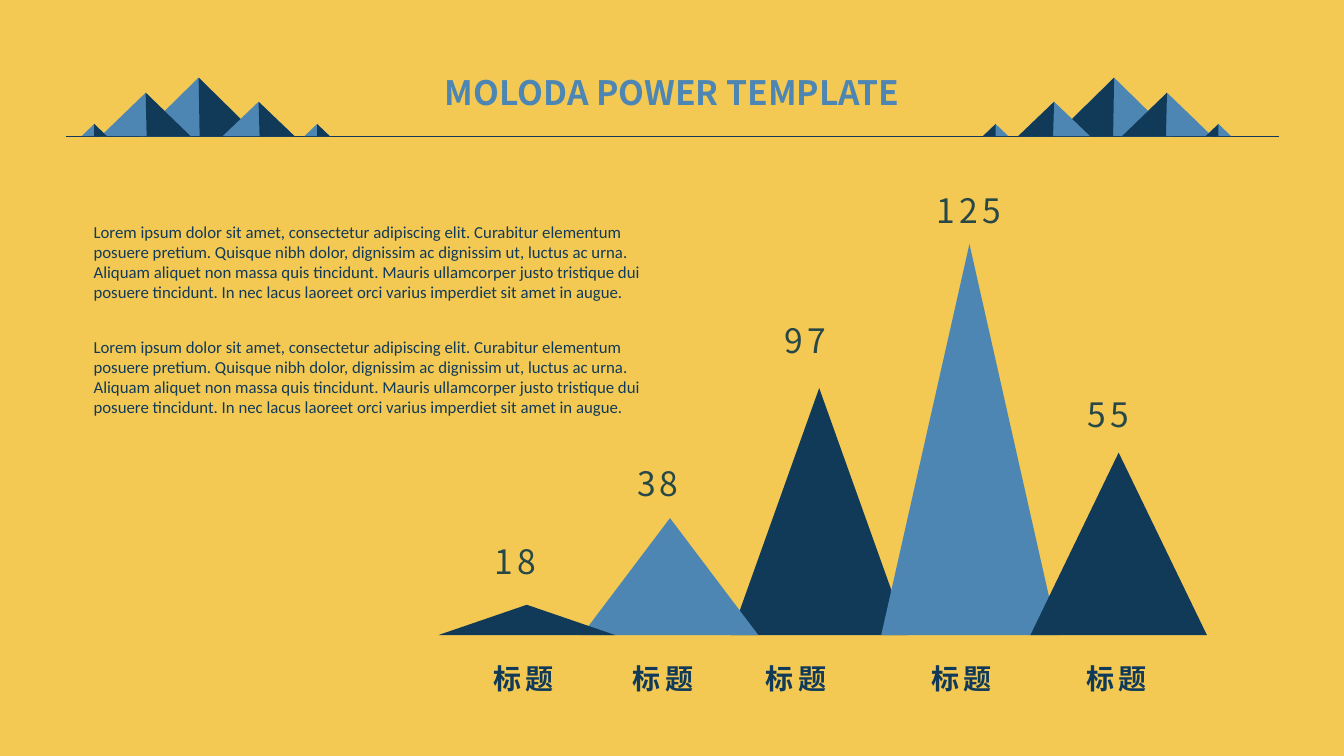
import pptx
import pptx.dml.color
import pptx.enum.shapes
import pptx.enum.text
import pptx.oxml.ns
import pptx.util
from lxml import etree

RGBColor = pptx.dml.color.RGBColor
SAND = RGBColor(0xF3, 0xC9, 0x53)
NAVY = RGBColor(0x11, 0x3A, 0x59)
BLUE = RGBColor(0x4D, 0x86, 0xB3)
MOSS = RGBColor(0x28, 0x48, 0x48)

SCALE = 9144  # EMU per px, 100 px to the inch
HEADING_FONT = "Noto Sans CJK SC"
BODY_FONT = "Calibri"
ALIGN = pptx.enum.text.PP_ALIGN

TITLE = {"size": 24, "name": HEADING_FONT, "color": BLUE, "bold": True}
VALUE = {"size": 24, "name": HEADING_FONT, "color": MOSS}
LABEL = {"size": 20, "name": HEADING_FONT, "color": NAVY, "bold": True}
BODY = {"size": 12, "name": BODY_FONT, "color": NAVY}

LOREM = (
    "Lorem ipsum dolor sit amet, consectetur adipiscing elit. Curabitur elementum "
    "posuere pretium. Quisque nibh dolor, dignissim ac dignissim ut, luctus ac urna. "
    "Aliquam aliquet non massa quis tincidunt. Mauris ullamcorper justo tristique dui "
    "posuere tincidunt. In nec lacus laoreet orci varius imperdiet sit amet in augue."
)

# Header mountains on the right: left, width, height
HEADER_BASE = 135
HEADER_PEAKS = [(1046, 118, 58), (1010, 71, 34), (1113, 89, 43),
                (975, 25, 12), (1196, 25, 12)]
MIRROR_SUM = 1302

# Chart peaks from back to front: value, left, top, colour,
# value box (left, top, width), label left
CHART_BASE, PEAK_WIDTH = 630, 175
CHART_PEAKS = [
    ("97", 725, 385, NAVY, (768, 312, 68), 747),
    ("38", 577, 514, BLUE, (622, 454, 68), 615),
    ("18", 435, 600, NAVY, (481, 532, 68), 477),
    ("125", 874, 242, BLUE, (919, 183, 92), 911),
    ("55", 1022, 449, NAVY, (1069, 386, 68), 1065),
]


def px(length):
    return pptx.util.Emu(length * SCALE)


class SlideBuilder:
    def __init__(self, deck):
        self.page = deck.slides.add_slide(deck.slide_layouts[6])
        self.shapes = self.page.shapes

    def background(self, color):
        fill = self.page.background.fill
        fill.solid()
        fill.fore_color.rgb = color

    def paint(self, shape, color):
        shape.shadow.inherit = False
        shape.fill.solid()
        shape.fill.fore_color.rgb = color
        shape.line.fill.background()

    def triangle(self, left, top, width, height, color, group):
        shape = group.shapes.add_shape(
            pptx.enum.shapes.MSO_SHAPE.ISOSCELES_TRIANGLE,
            px(left), px(top), px(width), px(height))
        self.paint(shape, color)

    def polygon(self, points, color, group=None):
        shapes = group.shapes if group else self.shapes
        start, *rest = [(px(x), px(y)) for x, y in points]
        builder = shapes.build_freeform(*start)
        builder.add_line_segments(rest, close=True)
        self.paint(builder.convert_to_shape(), color)

    def rule(self, left, right, y, color, weight):
        line = self.shapes.add_connector(
            pptx.enum.shapes.MSO_CONNECTOR.STRAIGHT,
            px(left), px(y), px(right), px(y))
        line.line.color.rgb = color
        line.line.width = pptx.util.Pt(weight)
        etree.SubElement(line._element.spPr, pptx.oxml.ns.qn("a:effectLst"))

    def text(self, words, left, top, width, height, style,
             align=ALIGN.LEFT, wrap=False, spacing=0):
        box = self.shapes.add_textbox(px(left), px(top), px(width), px(height))
        frame = box.text_frame
        frame.word_wrap = wrap
        if not wrap:
            frame.auto_size = pptx.enum.text.MSO_AUTO_SIZE.SHAPE_TO_FIT_TEXT
        para = frame.paragraphs[0]
        para.alignment = align
        span = para.add_run()
        span.text = words
        for key, value in style.items():
            if key == "color":
                span.font.color.rgb = value
            elif key == "size":
                span.font.size = pptx.util.Pt(value)
            else:
                setattr(span.font, key, value)
        # East Asian typeface and letter spacing
        properties = span._r.get_or_add_rPr()
        typeface = etree.SubElement(properties, pptx.oxml.ns.qn("a:ea"))
        typeface.set("typeface", style["name"])
        if spacing:
            properties.set("spc", str(spacing * 100))

    def mountain_range(self, mirrored):
        group = self.shapes.add_group_shape()
        for left, width, height in HEADER_PEAKS:
            top, middle = HEADER_BASE - height, left + width / 2
            foot = middle - (1 if height > 20 else 0)
            shaded = [(middle, top), (foot, HEADER_BASE), (left, HEADER_BASE)]
            if mirrored:
                left = MIRROR_SUM - left - width
                shaded = [(MIRROR_SUM - x, y) for x, y in shaded]
            self.triangle(left, top, width, height, BLUE, group)
            self.polygon([(int(x * 2) / 2, y) for x, y in shaded], NAVY, group)


def main():
    deck = pptx.Presentation()
    deck.slide_width, deck.slide_height = px(1333), px(750)
    slide = SlideBuilder(deck)
    slide.background(SAND)

    # Header
    slide.text("MOLODA POWER TEMPLATE", 407, 66, 519, 48, TITLE, ALIGN.CENTER)
    slide.rule(65, 1269, HEADER_BASE, NAVY, 0.5)
    for mirrored in (False, True):
        slide.mountain_range(mirrored)

    # Peak chart
    for _, left, top, color, _, _ in CHART_PEAKS:
        slide.polygon([(left + PEAK_WIDTH / 2, top),
                       (left + PEAK_WIDTH, CHART_BASE), (left, CHART_BASE)], color)

    # Values and labels
    for value, _, _, _, (left, top, width), label_left in CHART_PEAKS:
        slide.text(value, left, top, width, 51, VALUE, spacing=3)
        slide.text("标题", label_left, 651, 85, 44, LABEL, ALIGN.CENTER, spacing=3)

    # Body text
    for top in (215, 329):
        slide.text(LOREM, 83, top, 572, 89, BODY, wrap=True)

    deck.save("out.pptx")


if __name__ == "__main__":
    main()
